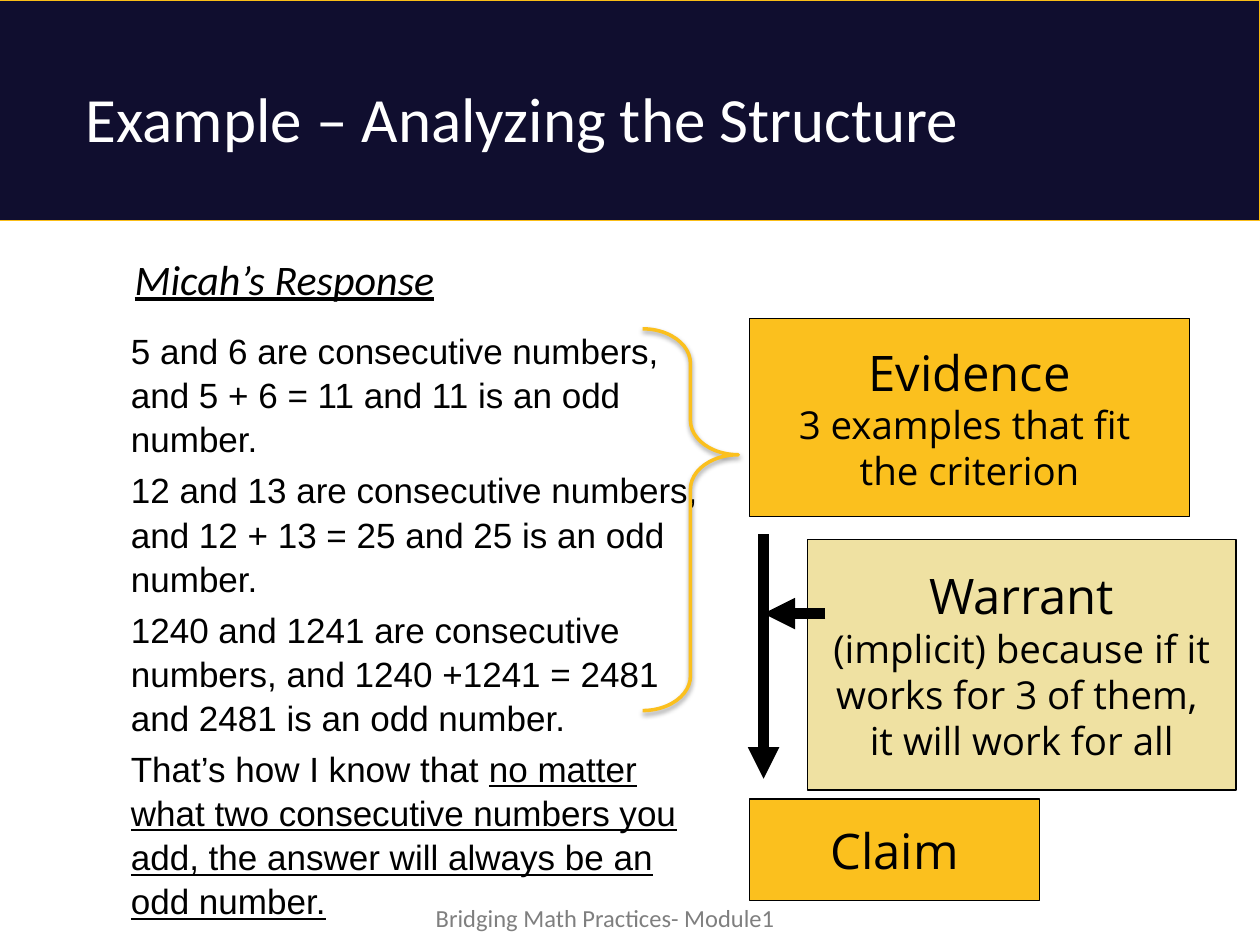
from lxml import etree
from pptx import Presentation
from pptx.dml.color import RGBColor
from pptx.enum.shapes import MSO_CONNECTOR, MSO_SHAPE
from pptx.enum.text import MSO_ANCHOR, MSO_AUTO_SIZE, PP_ALIGN
from pptx.oxml.ns import qn
from pptx.util import Inches, Pt

RECTANGLE, BRACE = MSO_SHAPE.RECTANGLE, MSO_SHAPE.RIGHT_BRACE
STRAIGHT = MSO_CONNECTOR.STRAIGHT
MIDDLE, NO_FIT = MSO_ANCHOR.MIDDLE, MSO_AUTO_SIZE.NONE
LEFT, CENTER = PP_ALIGN.LEFT, PP_ALIGN.CENTER

NAVY = RGBColor(0x10, 0x0E, 0x2F)
GOLD = RGBColor(0xFB, 0xC0, 0x1E)
BAND_EDGE = RGBColor(0xFA, 0xBD, 0x17)
CREAM = RGBColor(0xEF, 0xE1, 0xA2)
BLACK = RGBColor(0, 0, 0)
WHITE = RGBColor(255, 255, 255)
GRAY = RGBColor(0x7F, 0x7F, 0x7F)

deck = Presentation()
deck.slide_width, deck.slide_height = Inches(10), Inches(7.5)
COLUMN, ROW = deck.slide_width / 100, deck.slide_height / 75
page = deck.slides.add_slide(deck.slide_layouts[5])


def grid(left, top, width, height):
    return [int(left * COLUMN), int(top * ROW), int(width * COLUMN), int(height * ROW)]


def style(para, font, size, color):
    for span in para.runs:
        span.font.name, span.font.size = font, Pt(size)
        span.font.color.rgb = color


title = page.shapes.title
title.left, title.top, title.width, title.height = grid(5.8, 3.1, 90, 12.5)
title.text_frame.text = "Example – Analyzing the Structure"
title.text_frame.auto_size = NO_FIT
title.text_frame.vertical_anchor = MIDDLE
title.text_frame.paragraphs[0].alignment = LEFT
style(title.text_frame.paragraphs[0], "Calibri", 36, WHITE)

band = page.shapes.add_shape(RECTANGLE, *grid(-0.4, 0, 100.4, 17.5))
band.shadow.inherit = False
band.fill.solid()
band.fill.fore_color.rgb = NAVY
band.line.color.rgb, band.line.width = BAND_EDGE, Pt(0.75)
title.element.addprevious(band.element)

for text, place, size, color, heading in [
    ("Bridging Math Practices- Module1", (33.6, 71.2, 29.5, 3.4), 14, GRAY, False),
    ("Micah’s Response", (9.7, 19.6, 33.8, 8.3), 24, BLACK, True),
]:
    label = page.shapes.add_textbox(*grid(*place))
    label.text_frame.word_wrap = True
    para = label.text_frame.paragraphs[0]
    para.text = text
    style(para, "Calibri", size, color)
    if heading:
        para.font.italic = para.runs[0].font.italic = True
        para.runs[0].font.underline = True

response = page.shapes.add_textbox(*grid(9.4, 25.5, 47.5, 40.1))
response.text_frame.word_wrap = True
response.text_frame.text = "\n".join([
    "5 and 6 are consecutive numbers, and 5 + 6 = 11 and 11 is an odd number.",
    "12 and 13 are consecutive numbers, and 12 + 13 = 25 and 25 is an odd number.",
    "1240 and 1241 are consecutive numbers, and 1240 +1241 = 2481 and 2481 is an odd number.",
    "That’s how I know that ",
])
conclusion = response.text_frame.paragraphs[-1].add_run()
conclusion.text = "no matter what two consecutive numbers you add, the answer will always be an odd number."
conclusion.font.underline = True
for index, para in enumerate(response.text_frame.paragraphs):
    para.space_before = Pt(4 if index else 0)
    para.line_spacing = 1.05
    style(para, "Arial", 20, BLACK)

for place, fill, lines in [
    ((59.5, 25.3, 34.9, 15.7), GOLD, ["Evidence", "3 examples that fit ", "the criterion"]),
    ((64.1, 42.8, 34, 19.9), CREAM,
     ["Warrant", " (implicit) because if it ", "works for 3 of them, ", "it will work for all"]),
    ((59.5, 63.4, 23, 8.1), GOLD, ["Claim"]),
]:
    box = page.shapes.add_shape(RECTANGLE, *grid(*place))
    box.shadow.inherit = False
    box.fill.solid()
    box.fill.fore_color.rgb = fill
    box.line.color.rgb, box.line.width = BLACK, Pt(0.75)
    box.text_frame.word_wrap = False
    box.text_frame.vertical_anchor = MIDDLE
    box.text_frame.text = "\n".join(lines)
    for index, para in enumerate(box.text_frame.paragraphs):
        para.alignment = CENTER
        style(para, "Open Sans", 22 if index else 28, BLACK)

for ends in [(65.5, 48.7, 60.6, 48.7), (60.6, 42.4, 60.6, 61.8)]:
    arrow = page.shapes.add_connector(STRAIGHT, *grid(*ends))
    arrow.line.color.rgb, arrow.line.width = BLACK, Pt(6)
    properties = arrow.element.spPr
    etree.SubElement(properties.find(qn("a:ln")), qn("a:tailEnd"), type="triangle")
    etree.SubElement(properties, qn("a:effectLst"))

brace = page.shapes.add_shape(BRACE, *grid(51, 26.1, 7.6, 30.3))
brace.adjustments[0], brace.adjustments[1] = 0.36, 0.33
brace.fill.background()
brace.line.color.rgb, brace.line.width = GOLD, Pt(2)
brace.shadow.inherit = False
effects = brace.element.spPr.find(qn("a:effectLst"))
shadow = etree.SubElement(effects, qn("a:outerShdw"), blurRad=str(Pt(3.1)),
                          dist=str(Pt(1.6)), dir="5400000", rotWithShape="0")
shade = etree.SubElement(shadow, qn("a:srgbClr"), val=str(BLACK))
etree.SubElement(shade, qn("a:alpha"), val="38000")

deck.save("out.pptx")
